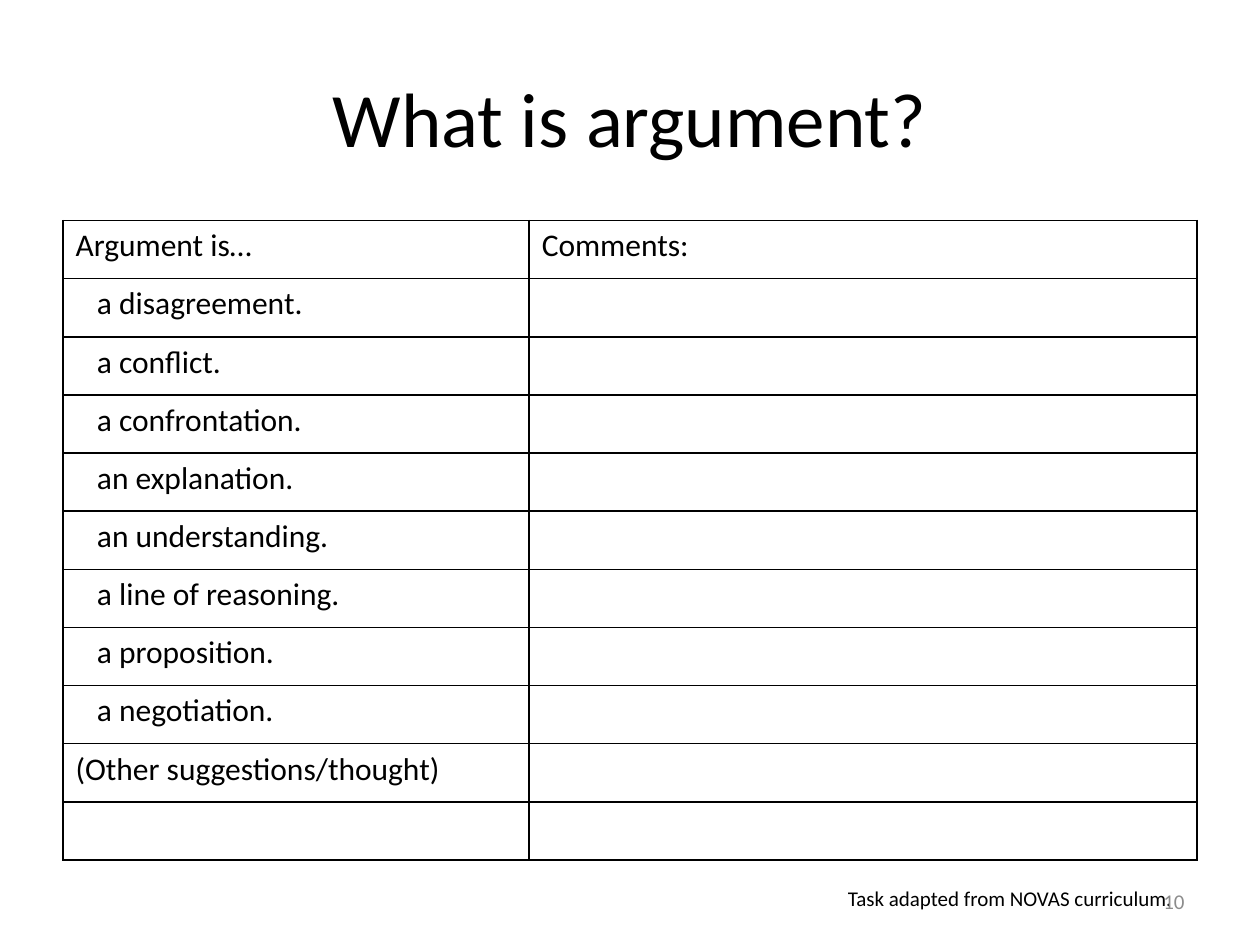
"""Build the slide 'What is argument?' with its discussion table."""
from lxml import etree
from pptx import Presentation
from pptx import util as u
from pptx.dml.color import RGBColor
from pptx.enum import text
from pptx.oxml import ns

COLOURS = {"ink": "000000", "muted": "8C8C8C", "paper": "FFFFFF"}
IDEAS = ["a disagreement.", "a conflict.", "a confrontation.", "an explanation.",
         "an understanding.", "a line of reasoning.", "a proposition.", "a negotiation."]
INSET = 7.2
INDENT = 12.2


class SlideBuilder:
    """Holds the style and the current slide."""

    def __init__(self, slide, font="Calibri"):
        self.slide = slide
        self.font = font

    def set_words(self, frame, words, size, colour="ink", align=text.PP_ALIGN.LEFT,
                  anchor=text.MSO_ANCHOR.TOP):
        """Fill a text frame with one formatted paragraph."""
        frame.word_wrap = True
        frame.vertical_anchor = anchor
        para = frame.paragraphs[0]
        para.alignment = align
        span = para.add_run()
        span.text = words
        for name, value in {"name": self.font, "size": u.Pt(size), "bold": False}.items():
            setattr(span.font, name, value)
        span.font.color.rgb = RGBColor.from_string(COLOURS[colour])

    def title(self, words, place, size):
        """Move the title placeholder and fill it."""
        box = self.slide.shapes.title
        for name, value in zip(("left", "top", "width", "height"), place):
            setattr(box, name, u.Pt(value))
        self.set_words(box.text_frame, words, size, align=text.PP_ALIGN.CENTER,
                       anchor=text.MSO_ANCHOR.MIDDLE)

    def label(self, words, place, size, **style):
        """Add a text box."""
        box = self.slide.shapes.add_textbox(*map(u.Pt, place))
        self.set_words(box.text_frame, words, size, **style)

    def border(self, cell, width=1):
        """Draw a solid line on all four sides of a cell."""
        props = cell._tc.get_or_add_tcPr()
        for index, side in enumerate(("lnL", "lnR", "lnT", "lnB")):
            line = etree.Element(ns.qn(f"a:{side}"), w=str(u.Pt(width)))
            fill = etree.SubElement(line, ns.qn("a:solidFill"))
            etree.SubElement(fill, ns.qn("a:srgbClr"), val=COLOURS["ink"])
            props.insert(index, line)

    def table(self, rows, place, widths, size):
        """Add a ruled table from rows of (words, indent) pairs."""
        grid = self.slide.shapes.add_table(len(rows), len(widths), *map(u.Pt, place)).table
        for name in ("first_row", "horz_banding"):
            setattr(grid, name, False)
        for column, width in zip(grid.columns, widths):
            column.width = u.Pt(width)
        for line, entries in zip(grid.rows, rows):
            line.height = u.Pt(place[3] / len(rows))
            for cell, (words, indent) in zip(line.cells, entries):
                cell.fill.solid()
                cell.fill.fore_color.rgb = RGBColor.from_string(COLOURS["paper"])
                cell.margin_left = u.Pt(INSET + indent)
                self.border(cell)
                if words:
                    self.set_words(cell.text_frame, words, size)


def main():
    """Build and save the deck."""
    deck = Presentation()
    deck.slide_width, deck.slide_height = u.Pt(720), u.Pt(540)
    page = SlideBuilder(deck.slides.add_slide(deck.slide_layouts[5]))
    blank = ("", 0)
    rows = [[("Argument is…", 0), ("Comments:", 0)]]
    rows += [[(idea, INDENT), blank] for idea in IDEAS]
    rows += [[("(Other suggestions/thought)", 0), blank], [blank, blank]]
    page.title("What is argument?", (36, 21.6, 648, 90), 44)
    page.label("Task adapted from NOVAS curriculum.", (477.4, 502.6, 208, 21.8), 12)
    page.table(rows, (36, 126, 648, 365.75), (266.4, 381.6), 18)
    page.label("10", (516, 500.5, 168, 28.75), 12, colour="muted",
               align=text.PP_ALIGN.RIGHT, anchor=text.MSO_ANCHOR.MIDDLE)
    deck.save("out.pptx")


if __name__ == "__main__":
    main()
